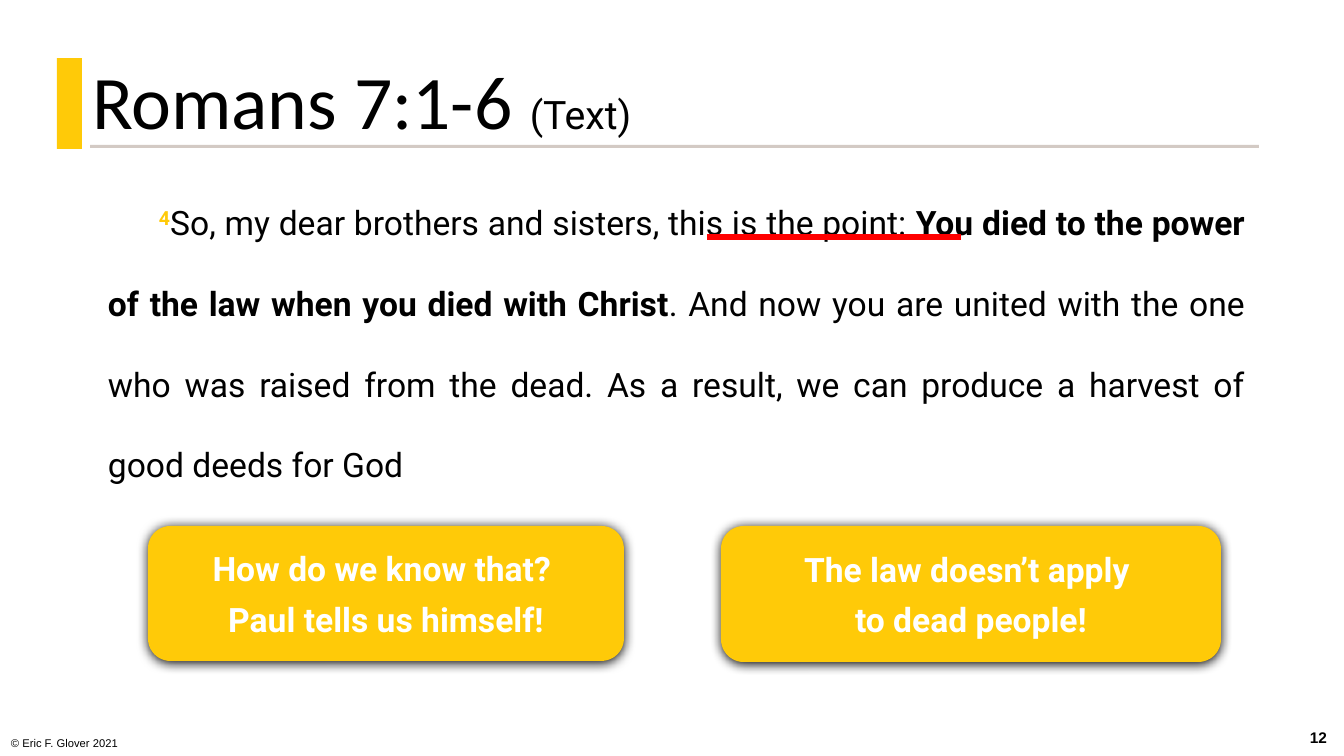
from lxml import etree
from pptx import Presentation
from pptx import util as u
from pptx.dml.color import RGBColor
from pptx.enum import shapes, text
from pptx.oxml.ns import qn

SCALE = 914400 / 100.8  # EMU per px
COLORS = {"gold": "FFCA08", "rule": "D3CAC4", "red": "FF0000",
          "black": "000000", "white": "FFFFFF"}


def px(*lengths):
    return [u.Emu(round(length * SCALE)) for length in lengths]


def style(run, size, font, color="black", bold=False):
    run.font.size = u.Pt(size)
    run.font.name = font
    run.font.bold = bold
    run.font.color.rgb = RGBColor.from_string(COLORS[color])


presentation = Presentation()
presentation.slide_width, presentation.slide_height = px(1344, 756)
slide = presentation.slides.add_slide(presentation.slide_layouts[1])
title, body = slide.placeholders

# Slide number and copyright line
for label, box, size, bold, alignment, anchor in [
    ("12", (1294, 717, 49, 40), 11, True, text.PP_ALIGN.CENTER, text.MSO_ANCHOR.MIDDLE),
    ("© Eric F. Glover 2021", (1, 727, 158, 28), 8, False, text.PP_ALIGN.LEFT, text.MSO_ANCHOR.BOTTOM),
]:
    frame = slide.shapes.add_textbox(*px(*box)).text_frame
    frame.word_wrap = True
    frame.vertical_anchor = anchor
    frame.text = label
    paragraph = frame.paragraphs[0]
    paragraph.alignment = alignment
    paragraph.space_after = u.Pt(6 if bold else 0)
    style(paragraph.runs[0], size, "Arial", bold=bold)

# Title
title.left, title.top, title.width, title.height = px(82, 22, 1193, 129)
title.text_frame.auto_size = text.MSO_AUTO_SIZE.NONE
title.text_frame.vertical_anchor = text.MSO_ANCHOR.BOTTOM
paragraph = title.text_frame.paragraphs[0]
paragraph.alignment = text.PP_ALIGN.LEFT
paragraph.line_spacing = 0.9
for words, size, font in [("Romans 7:1-6 ", 54, "Calibri"), ("(Text)", 28, "Roboto")]:
    run = paragraph.add_run()
    run.text = words
    style(run, size, font)

# Title rule and gold bar
for box, color in [((90, 145, 1169, 3), "rule"), ((57, 58, 25, 91), "gold")]:
    shape = slide.shapes.add_shape(shapes.MSO_SHAPE.RECTANGLE, *px(*box))
    shape.shadow.inherit = False
    shape.fill.solid()
    shape.fill.fore_color.rgb = RGBColor.from_string(COLORS[color])
    shape.line.fill.background()

# Bible verse
body.left, body.top, body.width, body.height = px(98, 162, 1147, 338)
frame = body.text_frame
frame.auto_size = text.MSO_AUTO_SIZE.NONE
frame.margin_left, frame.margin_top, frame.margin_right, frame.margin_bottom = px(10, 0, 0, 5)
paragraph = frame.paragraphs[0]
properties = paragraph._p.get_or_add_pPr()
properties.set("marL", "0")
properties.set("indent", str(px(51)[0]))
etree.SubElement(properties, qn("a:buNone"))
paragraph.alignment = text.PP_ALIGN.JUSTIFY
paragraph.line_spacing = 2.0
paragraph.space_before = u.Pt(0)
paragraph.space_after = u.Pt(6)
for words, color, bold in [
    ("4", "gold", True),
    ("So, my dear brothers and sisters, this is the point: ", "black", False),
    ("You died to the power of the law when you died with Christ", "black", True),
    (". And now you are united with the one who was raised from the dead. "
     "As a result, we can produce a harvest of good deeds for God", "black", False),
]:
    run = paragraph.add_run()
    run.text = words
    style(run, 24, "Roboto", color, bold)
paragraph.runs[0].font._element.set("baseline", "30000")

# Red underline
underline = slide.shapes.add_connector(shapes.MSO_CONNECTOR.STRAIGHT, *px(707, 237, 961, 237))
underline.line.color.rgb = RGBColor.from_string(COLORS["red"])
underline.line.width = u.Pt(4.5)
etree.SubElement(underline._element.spPr, qn("a:effectLst"))

# Callout boxes
for words, box in [
    ("How do we know that? \vPaul tells us himself!", (148, 526, 476, 135)),
    ("The law doesn’t apply \vto dead people!", (721, 526, 500, 136)),
]:
    shape = slide.shapes.add_shape(shapes.MSO_SHAPE.ROUNDED_RECTANGLE, *px(*box))
    shape.fill.solid()
    shape.fill.fore_color.rgb = RGBColor.from_string(COLORS["gold"])
    shape.line.fill.background()
    shape.shadow.inherit = False
    effects = shape._element.spPr.find(qn("a:effectLst"))
    shadow = etree.SubElement(effects, qn("a:outerShdw"), blurRad=str(u.Pt(8.5)),
                              dist=str(u.Pt(1)), dir="5400000", algn="ctr", rotWithShape="0")
    etree.SubElement(shadow, qn("a:srgbClr"), val=COLORS["black"])
    frame = shape.text_frame
    frame.word_wrap = True
    frame.vertical_anchor = text.MSO_ANCHOR.MIDDLE
    frame.margin_left, frame.margin_top, frame.margin_right, frame.margin_bottom = px(10, 0, 10, 10)
    frame.text = words
    paragraph = frame.paragraphs[0]
    paragraph.alignment = text.PP_ALIGN.CENTER
    paragraph.line_spacing = 1.25
    for run in paragraph.runs:
        style(run, 24, "Roboto", "white", True)

presentation.save("out.pptx")
